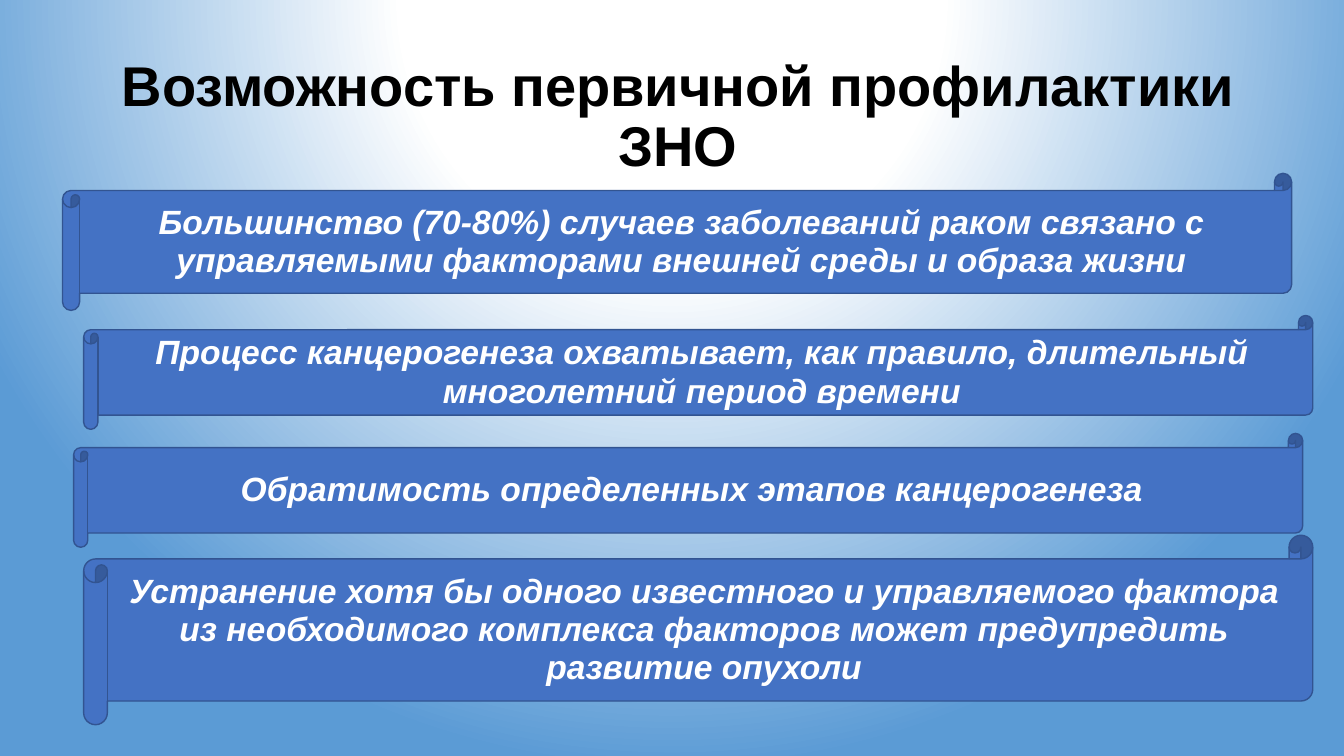
from pptx import Presentation
from pptx.dml.color import RGBColor
from pptx.enum.shapes import MSO_SHAPE as Shape
from pptx.enum.text import MSO_ANCHOR as Anchor, PP_ALIGN as Align
from pptx.oxml import parse_xml
from pptx.oxml.ns import nsdecls, qn
from pptx.util import Inches, Pt

TITLE = "Возможность первичной профилактики ЗНО"
WIDTH = 12.19
SCROLLS = [
    (0.62, 1.72, 1.36, "Большинство (70-80%) случаев заболеваний раком связано с "
     "управляемыми факторами внешней среды и образа жизни"),
    (0.83, 3.13, 1.13, "Процесс канцерогенеза охватывает, как правило, длительный "
     "многолетний период времени"),
    (0.73, 4.3, 1.13, "Обратимость определенных этапов канцерогенеза"),
    (0.83, 5.31, 1.88, "Устранение хотя бы одного известного и управляемого фактора "
     "из необходимого комплекса факторов может предупредить развитие опухоли"),
]


def color(code):
    return RGBColor.from_string(code)


def paint_back(slide, stops):
    """Fill the background with a circular gradient centred above the slide."""
    slide.background.fill.gradient()
    grad = slide.element.find(".//" + qn("a:gradFill"))
    marks = "".join(
        f'<a:gs pos="{pos * 1000}"><a:srgbClr val="{code}"/></a:gs>'
        for pos, code in stops
    )
    grad.getparent().replace(grad, parse_xml(
        f'<a:gradFill {nsdecls("a")} rotWithShape="1"><a:gsLst>{marks}</a:gsLst>'
        '<a:path path="circle"><a:fillToRect l="50000" t="-80000" r="50000" '
        'b="180000"/></a:path></a:gradFill>'
    ))


def place(shape, left, top, width, height):
    shape.left, shape.top = Inches(left), Inches(top)
    shape.width, shape.height = Inches(width), Inches(height)


def write(shape, text, size, code, spacing, italic=False):
    frame = shape.text_frame
    frame.word_wrap = True
    frame.vertical_anchor = Anchor.MIDDLE
    para = frame.paragraphs[0]
    para.text = text
    para.alignment = Align.CENTER
    para.line_spacing = spacing
    font = para.font
    font.name, font.size = "Arial", Pt(size)
    font.bold, font.italic = True, italic
    font.color.rgb = color(code)
    return para


def add_scroll(slide, left, top, height, text):
    shape = slide.shapes.add_shape(
        Shape.HORIZONTAL_SCROLL,
        Inches(left), Inches(top), Inches(WIDTH), Inches(height),
    )
    shape.shadow.inherit = False
    shape.fill.solid()
    shape.fill.fore_color.rgb = color("4472C4")
    shape.line.color.rgb = color("325491")
    shape.line.width = Pt(1)
    para = write(shape, text, 24, "FFFFFF", 0.95, italic=True)
    para.space_before = Pt(6)


def main():
    deck = Presentation()
    deck.slide_width, deck.slide_height = Inches(13.33), Inches(7.5)
    slide = deck.slides.add_slide(deck.slide_layouts[5])
    paint_back(slide, [(0, "FFFFFF"), (35, "FFFFFF"), (100, "5B9BD5")])
    title = slide.shapes.title
    place(title, 0.67, 0.55, 12.11, 1.25)
    write(title, TITLE, 40, "000000", 0.9)
    for scroll in SCROLLS:
        add_scroll(slide, *scroll)
    deck.save("out.pptx")


if __name__ == "__main__":
    main()
